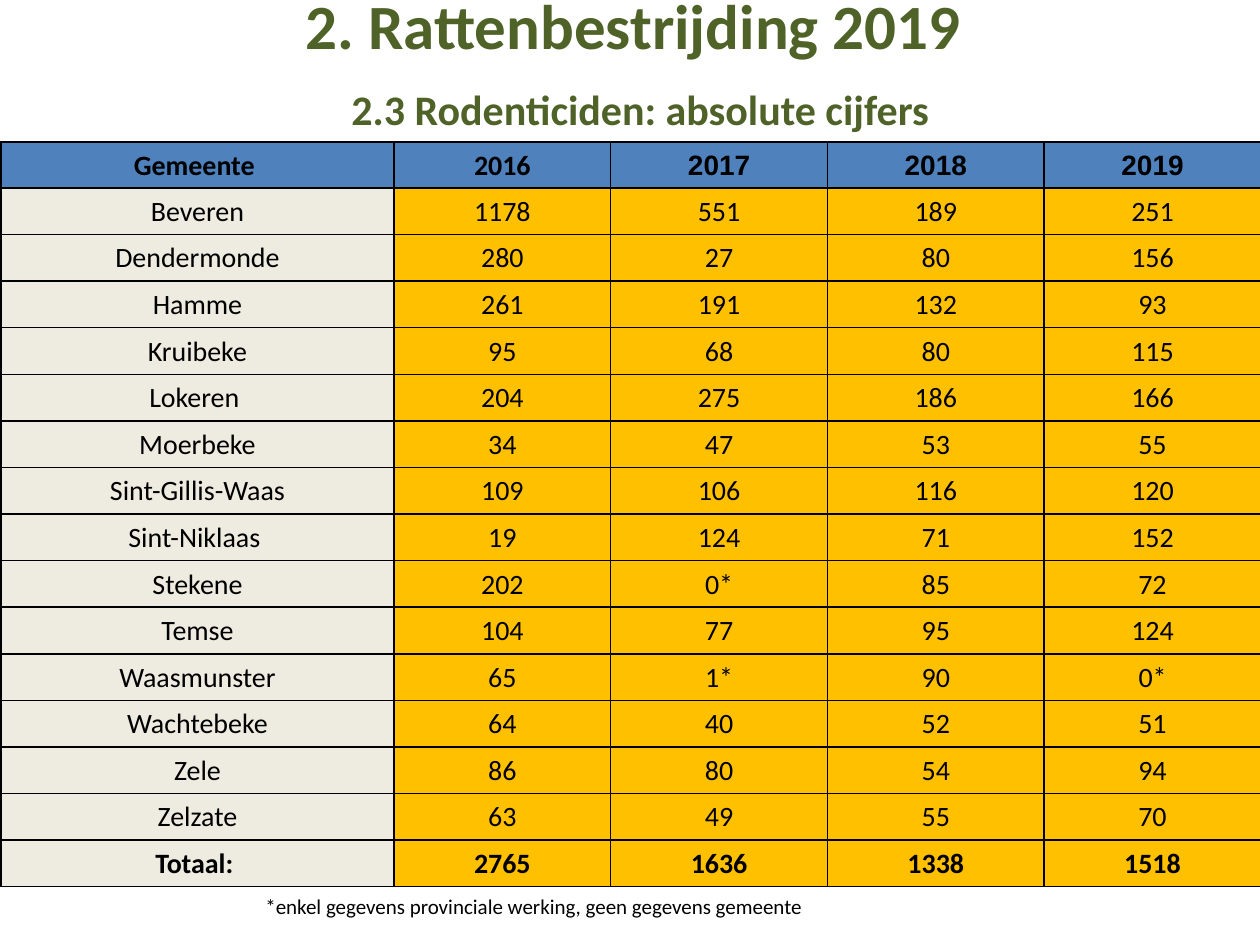
import pptx
import pptx.dml.color
import pptx.enum.text
import pptx.oxml
import pptx.oxml.ns
import pptx.util

# Content
TITLE = "2. Rattenbestrijding 2019"
SUBTITLE = "2.3 Rodenticiden: absolute cijfers"
FOOTNOTE = "*enkel gegevens provinciale werking, geen gegevens gemeente"
ROWS = [
    ("Gemeente ", "2016", "2017", "2018", "2019"),
    ("Beveren", "1178", "551", "189", "251"),
    ("Dendermonde", "280", "27", "80", "156"),
    ("Hamme", "261", "191", "132", "93"),
    ("Kruibeke", "95", "68", "80", "115"),
    ("Lokeren ", "204", "275", "186", "166"),
    ("Moerbeke", "34", "47", "53", "55"),
    ("Sint-Gillis-Waas", "109", "106", "116", "120"),
    ("Sint-Niklaas ", "19", "124", "71", "152"),
    ("Stekene", "202", "0*", "85", "72"),
    ("Temse", "104", "77", "95", "124"),
    ("Waasmunster", "65", "1*", "90", "0*"),
    ("Wachtebeke", "64", "40", "52", "51"),
    ("Zele", "86", "80", "54", "94"),
    ("Zelzate", "63", "49", "55", "70"),
    ("Totaal: ", "2765", "1636", "1338", "1518"),
]


class Theme:
    font, year_font = "Calibri", "Arial"
    title_size, subtitle_size, table_size, note_size = 36, 24, 16, 12
    title, text, border = "4F6228", "000000", "000000"
    header, name, value = "4F81BD", "EEECE1", "FFC000"


# Layout in px
SLIDE_WIDTH, SLIDE_HEIGHT = 1260, 945
TITLE_BOX = (64, 0, 1134, 125)
TABLE_BOX = (1, 142, 1260, 745)
NOTE_BOX = (253, 887, 922, 38)
NAME_WIDTH, HEADER_HEIGHT = 393, 46


def px(value):
    return pptx.util.Emu(round(value * 914400 / 126))


def set_font(font, size, color, bold=False, name=Theme.font):
    font.name, font.size, font.bold = name, pptx.util.Pt(size), bold
    font.color.rgb = pptx.dml.color.RGBColor.from_string(color)


def add_text_box(slide, box):
    frame = slide.shapes.add_textbox(*map(px, box)).text_frame
    frame.word_wrap = True
    return frame


def add_borders(cell):
    properties = cell._tc.get_or_add_tcPr()
    for position, side in enumerate(("lnL", "lnR", "lnT", "lnB")):
        properties.insert(position, pptx.oxml.parse_xml(
            f'<a:{side} {pptx.oxml.ns.nsdecls("a")} w="12700"><a:solidFill>'
            f'<a:srgbClr val="{Theme.border}"/></a:solidFill></a:{side}>'))


def add_title(slide):
    frame = add_text_box(slide, TITLE_BOX)
    frame.vertical_anchor = pptx.enum.text.MSO_ANCHOR.MIDDLE
    frame.margin_left = px(17)
    paragraph = frame.paragraphs[0]
    paragraph.alignment = pptx.enum.text.PP_ALIGN.CENTER
    set_font(paragraph.font, Theme.title_size, Theme.title, True)
    # The large space gives the second line the height of the first
    for text, size in ((TITLE, Theme.title_size), (None, None),
                       (" ", Theme.title_size), (SUBTITLE, Theme.subtitle_size)):
        if text is None:
            paragraph.add_line_break()
            continue
        run = paragraph.add_run()
        run.text = text
        set_font(run.font, size, Theme.title, True)


def fill_cell(cell, text, row, column):
    is_header = row == 0
    fill = Theme.header if is_header else Theme.value if column else Theme.name
    cell.fill.solid()
    cell.fill.fore_color.rgb = pptx.dml.color.RGBColor.from_string(fill)
    cell.vertical_anchor = pptx.enum.text.MSO_ANCHOR.MIDDLE
    cell.margin_left = cell.margin_right = cell.margin_top = px(1)
    cell.margin_bottom = 0
    add_borders(cell)
    cell.text = text
    paragraph = cell.text_frame.paragraphs[0]
    paragraph.alignment = pptx.enum.text.PP_ALIGN.CENTER
    set_font(paragraph.font, Theme.table_size, Theme.text,
             bold=is_header or row == len(ROWS) - 1,
             name=Theme.year_font if is_header and column > 1 else Theme.font)


def add_rodenticide_table(slide):
    width, height = TABLE_BOX[2:]
    table = slide.shapes.add_table(
        len(ROWS), len(ROWS[0]), *map(px, TABLE_BOX)).table
    for index, column in enumerate(table.columns):
        column.width = px((width - NAME_WIDTH) / (len(ROWS[0]) - 1) if index else NAME_WIDTH)
    for index, row in enumerate(table.rows):
        row.height = px((height - HEADER_HEIGHT) / (len(ROWS) - 1) if index else HEADER_HEIGHT)
    for row, texts in enumerate(ROWS):
        for column, text in enumerate(texts):
            fill_cell(table.cell(row, column), text, row, column)


def add_footnote(slide):
    frame = add_text_box(slide, NOTE_BOX)
    frame.text = FOOTNOTE
    set_font(frame.paragraphs[0].font, Theme.note_size, Theme.text)


def main():
    presentation = pptx.Presentation()
    presentation.slide_width, presentation.slide_height = px(SLIDE_WIDTH), px(SLIDE_HEIGHT)
    slide = presentation.slides.add_slide(presentation.slide_layouts[6])
    add_title(slide)
    add_rodenticide_table(slide)
    add_footnote(slide)
    presentation.save("out.pptx")


if __name__ == "__main__":
    main()
